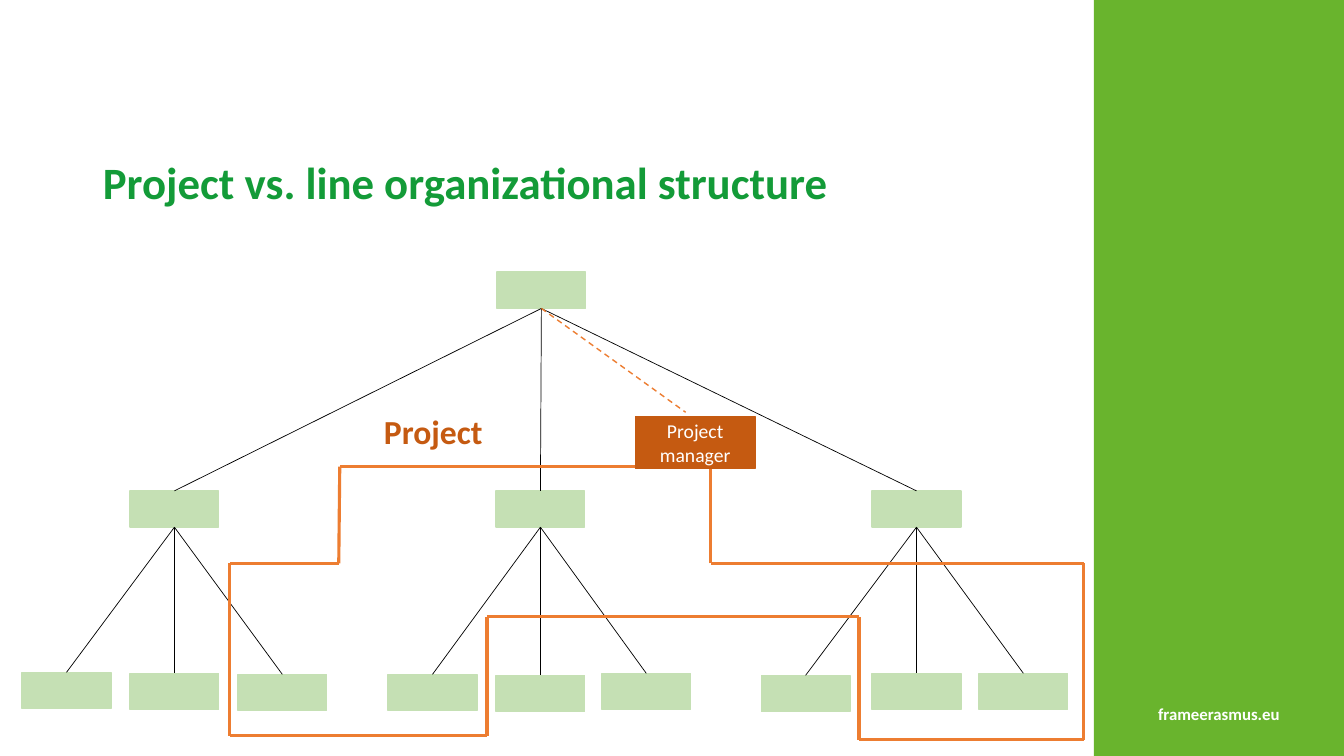
import pptx
import pptx.dml.color
import pptx.enum.dml
import pptx.enum.shapes
import pptx.enum.text
import pptx.oxml.ns
import pptx.util
from dataclasses import dataclass
from lxml import etree
from pptx.util import Inches

ALIGN = pptx.enum.text.PP_ALIGN
MIDDLE = pptx.enum.text.MSO_ANCHOR.MIDDLE
BOTTOM_SITE, TOP_SITE = 2, 0


@dataclass(frozen=True)
class Theme:
    font: str = "Calibri"
    band: str = "69B42D"
    title: str = "139B38"
    unit: str = "C5E0B4"
    manager: str = "C55A11"
    boundary: str = "ED7D31"
    black: str = "000000"
    white: str = "FFFFFF"
    title_size: int = 32
    label_size: int = 24
    manager_size: int = 14
    footer_size: int = 12


THEME = Theme()

UNIT_WIDTH, UNIT_HEIGHT = 0.88, 0.36
ROOT = (4.93, 2.7)
DEPARTMENT_TOP = 4.87
# Left edge of each department, then the places of its teams
DEPARTMENTS = [
    (1.29, [(0.22, 6.67), (1.29, 6.68), (2.36, 6.69)]),
    (4.92, [(3.85, 6.69), (4.92, 6.7), (5.97, 6.68)]),
    (8.65, [(7.55, 6.7), (8.65, 6.68), (9.71, 6.68)]),
]
# Corners of the outline around the project team
PROJECT_CORNERS = [
    (2.28, 5.59), (2.28, 7.3), (4.83, 7.3), (4.83, 6.12),
    (8.52, 6.12), (8.52, 7.34), (10.75, 7.34), (10.75, 5.59),
    (7.05, 5.59), (7.05, 4.63), (3.37, 4.63), (3.36, 5.59),
]


def rgb(color):
    return pptx.dml.color.RGBColor.from_string(color)


def write(shape, text, size, color, bold=False, align=ALIGN.LEFT):
    shape.text_frame.text = text
    shape.text_frame.word_wrap = True
    paragraph = shape.text_frame.paragraphs[0]
    paragraph.alignment = align
    for run in paragraph.runs:
        run.font.name = THEME.font
        run.font.size = pptx.util.Pt(size)
        run.font.bold = bold
        run.font.color.rgb = rgb(color)


def add_box(slide, left, top, width, height, color, outlined=True):
    shape = slide.shapes.add_shape(
        pptx.enum.shapes.MSO_SHAPE.RECTANGLE,
        Inches(left), Inches(top), Inches(width), Inches(height))
    shape.shadow.inherit = False
    shape.fill.solid()
    shape.fill.fore_color.rgb = rgb(color)
    if outlined:
        shape.line.color.rgb = rgb(color)
        shape.line.width = pptx.util.Pt(1)
    else:
        shape.line.fill.background()
    return shape


def add_unit(slide, left, top):
    return add_box(slide, left, top, UNIT_WIDTH, UNIT_HEIGHT, THEME.unit)


def add_label(slide, left, top, width, height, *args, **options):
    label = slide.shapes.add_textbox(
        Inches(left), Inches(top), Inches(width), Inches(height))
    write(label, *args, **options)


def add_line(slide, start, end, color, width):
    line = slide.shapes.add_connector(
        pptx.enum.shapes.MSO_CONNECTOR.STRAIGHT,
        *(Inches(length) for length in (*start, *end)))
    line.line.color.rgb = rgb(color)
    line.line.width = pptx.util.Pt(width)
    etree.SubElement(line._element.spPr, pptx.oxml.ns.qn("a:effectLst"))
    return line


def link_units(slide, parent, child):
    line = add_line(slide, (0, 0), (1, 1), THEME.black, 0.5)
    line.begin_connect(parent, BOTTOM_SITE)
    line.end_connect(child, TOP_SITE)


def add_title(slide, text):
    title = slide.shapes.title
    title.left, title.top = Inches(0.92), Inches(1.35)
    title.width, title.height = Inches(9.56), Inches(0.97)
    write(title, text, THEME.title_size, THEME.title, bold=True)
    title.text_frame.auto_size = pptx.enum.text.MSO_AUTO_SIZE.NONE
    title.text_frame.vertical_anchor = MIDDLE
    title.text_frame.paragraphs[0].line_spacing = 0.9


def add_organization(slide):
    root = add_unit(slide, *ROOT)
    for left, team_places in DEPARTMENTS:
        department = add_unit(slide, left, DEPARTMENT_TOP)
        link_units(slide, root, department)
        for place in team_places:
            link_units(slide, department, add_unit(slide, *place))
    return root


def add_project(slide, root):
    # Outline of the project team
    next_corners = PROJECT_CORNERS[1:] + PROJECT_CORNERS[:1]
    for start, end in zip(PROJECT_CORNERS, next_corners):
        add_line(slide, start, end, THEME.boundary, 2.25)
    add_label(slide, 3.71, 4.03, 1.63, 0.5, "Project",
              THEME.label_size, THEME.manager, bold=True)

    # Project manager, reporting to the top unit
    manager = add_box(slide, 6.3, 4.13, 1.19, 0.52, THEME.manager)
    write(manager, "Project manager", THEME.manager_size, THEME.white,
          align=ALIGN.CENTER)
    manager.text_frame.vertical_anchor = MIDDLE
    report = add_line(slide, (5.37, 3.06), (6.8, 4.09), THEME.boundary, 1)
    report.line.dash_style = pptx.enum.dml.MSO_LINE.DASH
    report.begin_connect(root, BOTTOM_SITE)


def main():
    presentation = pptx.Presentation()
    presentation.slide_width = Inches(13.33)
    presentation.slide_height = Inches(7.5)
    slide = presentation.slides.add_slide(
        presentation.slide_layouts.get_by_name("Title Only"))

    # Side band with web address
    add_box(slide, 10.85, 0, 2.48, 7.5, THEME.band, outlined=False)
    add_label(slide, 10.85, 6.93, 2.48, 0.3, "frameerasmus.eu",
              THEME.footer_size, THEME.white, bold=True, align=ALIGN.CENTER)

    add_title(slide, "Project vs. line organizational structure")
    root = add_organization(slide)
    add_project(slide, root)
    presentation.save("out.pptx")


if __name__ == "__main__":
    main()
